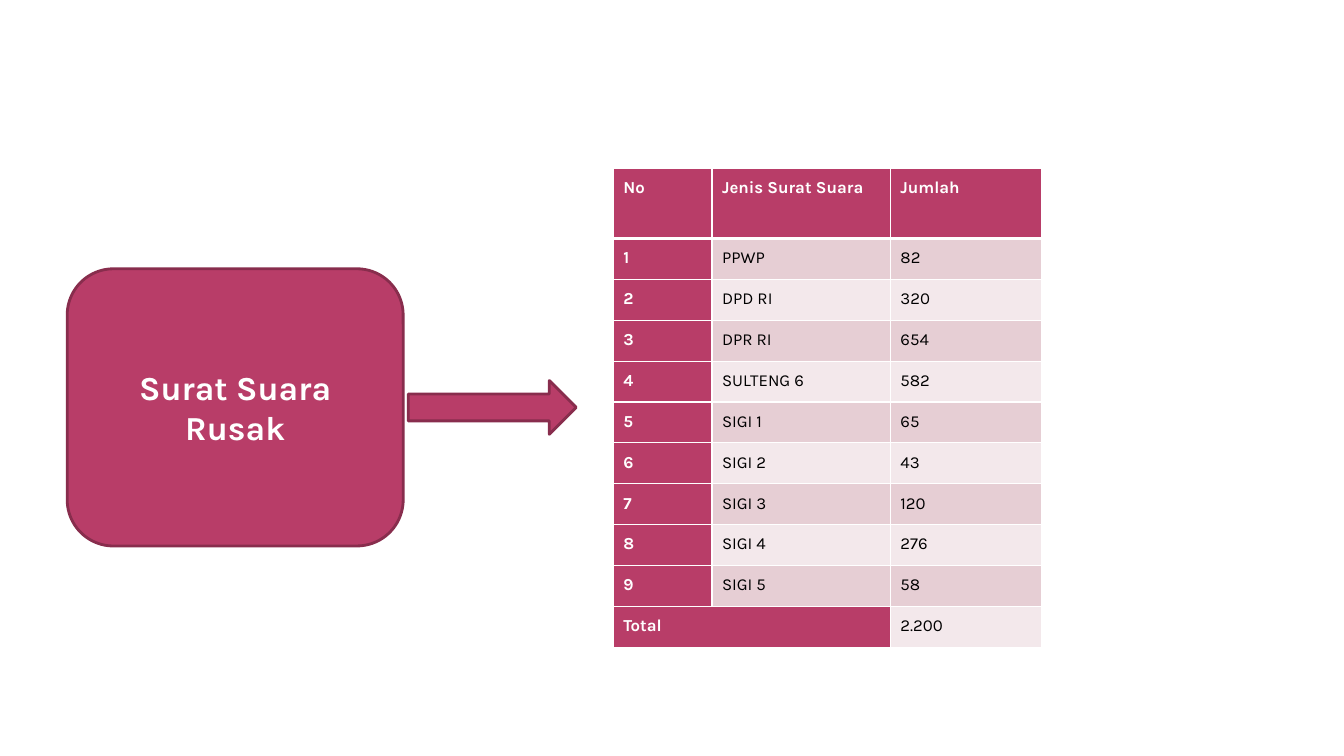
from lxml.etree import SubElement
from pptx import Presentation
from pptx.dml.color import RGBColor
from pptx.enum.shapes import MSO_SHAPE
from pptx.enum.text import MSO_ANCHOR, PP_ALIGN
from pptx.oxml.ns import qn
from pptx.util import Pt

FONT = "Karla"
ROSE, DARK_ROSE, WHITE, BLACK = "B83D68", "882D4D", "FFFFFF", "000000"
BANDS = ("F3E8EB", "E6CED4")
COLUMN_WIDTHS = (70.6, 127.4, 108)
HEADER_HEIGHT = 50
BALLOTS = (
    ("No", "Jenis Surat Suara", "Jumlah"),
    ("1", "PPWP", "82"),
    ("2", "DPD RI", "320"),
    ("3", "DPR RI", "654"),
    ("4", "SULTENG 6", "582"),
    ("5", "SIGI 1", "65"),
    ("6", "SIGI 2", "43"),
    ("7", "SIGI 3", "120"),
    ("8", "SIGI 4", "276"),
    ("9", "SIGI 5", "58"),
    ("Total", "", "2.200"),
)


def paint(color_format, color):
    """Give a colour format or a fill's foreground a hex colour."""
    color_format.rgb = RGBColor.from_string(color)


def style_text(paragraph, size, color, bold):
    """Format every run of a paragraph."""
    for run in paragraph.runs:
        run.font.name = FONT
        run.font.size = Pt(size)
        run.font.bold = bold
        paint(run.font.color, color)


def add_block(slide, preset, left, top, width, height):
    """Add a rose preset shape with a dark rose outline."""
    block = slide.shapes.add_shape(preset, Pt(left), Pt(top), Pt(width), Pt(height))
    block.shadow.inherit = False
    block.fill.solid()
    paint(block.fill.fore_color, ROSE)
    paint(block.line.color, DARK_ROSE)
    block.line.width = Pt(2)
    return block


def add_topic(slide, left, top, width, height):
    """Draw the topic card and the arrow leading from it to the table."""
    card = add_block(slide, MSO_SHAPE.ROUNDED_RECTANGLE, left, top, width, height)
    frame = card.text_frame
    frame.word_wrap = True
    frame.vertical_anchor = MSO_ANCHOR.MIDDLE
    frame.text = "Surat Suara Rusak"
    frame.paragraphs[0].alignment = PP_ALIGN.CENTER
    style_text(frame.paragraphs[0], 24, WHITE, True)
    arrow_height = 38.4
    arrow_top = top + (height - arrow_height) / 2
    add_block(slide, MSO_SHAPE.RIGHT_ARROW, left + width + 3.6, arrow_top, 120, arrow_height)


def set_borders(cell, top, bottom):
    """Draw white cell borders with the given top and bottom widths."""
    properties = cell._tc.get_or_add_tcPr()
    for side, width in (("L", 1), ("R", 1), ("T", top), ("B", bottom)):
        border = SubElement(properties, qn(f"a:ln{side}"), w=str(Pt(width)))
        fill = SubElement(border, qn("a:solidFill"))
        SubElement(fill, qn("a:srgbClr"), val=WHITE)


def style_cell(cell, row, column):
    """Format a cell as a heading or as part of a banded row."""
    heading = row == 0 or column == 0 or cell.is_spanned
    set_borders(cell, 3 if row == 1 else 1, 3 if row == 0 else 1)
    cell.fill.solid()
    paint(cell.fill.fore_color, ROSE if heading else BANDS[row % 2])
    cell.margin_left = cell.margin_right = Pt(7.2)
    cell.margin_top = cell.margin_bottom = Pt(0)
    paragraph = cell.text_frame.paragraphs[0]
    paragraph.alignment = PP_ALIGN.JUSTIFY
    paragraph.line_spacing = 1.5
    style_text(paragraph, 12, WHITE if heading else BLACK, heading)


def add_ballot_table(slide, left, top, width, height):
    """Tabulate damaged ballots by type, with a total row."""
    frame = slide.shapes.add_table(
        len(BALLOTS), len(COLUMN_WIDTHS), Pt(left), Pt(top), Pt(width), Pt(height)
    )
    table = frame.table
    for column, column_width in zip(table.columns, COLUMN_WIDTHS):
        column.width = Pt(column_width * width / sum(COLUMN_WIDTHS))
    body_height = (height - HEADER_HEIGHT) / (len(BALLOTS) - 1)
    total = len(BALLOTS) - 1
    table.cell(total, 0).merge(table.cell(total, 1))
    for row, entries in enumerate(BALLOTS):
        table.rows[row].height = Pt(body_height if row else HEADER_HEIGHT)
        for column, entry in enumerate(entries):
            cell = table.cell(row, column)
            cell.text_frame.text = entry
            style_cell(cell, row, column)


def main():
    """Build the damaged ballots slide."""
    deck = Presentation()
    deck.slide_width, deck.slide_height = Pt(960), Pt(540)
    slide = deck.slides.add_slide(deck.slide_layouts[6])
    add_ballot_table(slide, 438, 120.4, 306, 342)
    add_topic(slide, 48, 192, 240, 198)
    deck.save("out.pptx")


if __name__ == "__main__":
    main()
